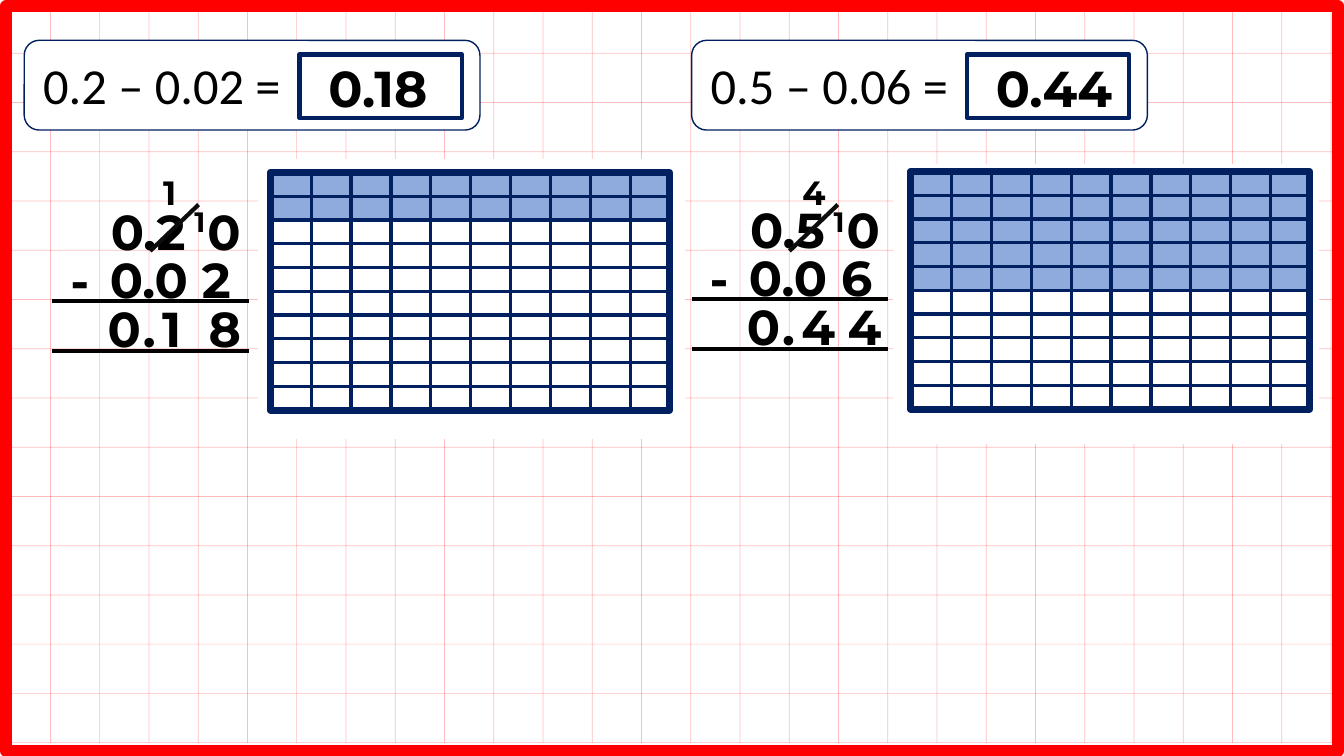
from lxml import etree
from pptx import Presentation
from pptx.dml.color import RGBColor
from pptx.enum.shapes import MSO_CONNECTOR, MSO_SHAPE
from pptx.enum.text import MSO_AUTO_SIZE
from pptx.oxml.ns import qn
from pptx.util import Inches, Pt

COLORS = {
    "red": "FF0000",
    "white": "FFFFFF",
    "navy": "002060",
    "shade": "8FAADC",
    "black": "000000",
    "strike": "0D0D0D",
}

PROBLEMS = [
    {
        "equation": "0.2 – 0.02 =", "answer": "0.18",
        "top_number": "0.2", "bottom_number": "0.0 2",
        "result": ("0", ".", "1", "8"), "reduced_digit": "1",
        "shaded_rows": 2, "split_column": 8,
        "equation_left": 0.24, "sum_left": 0.52, "sum_top": 1.95,
        "grid_left": 2.68, "grid_top": 1.71, "panel": (2.57, 1.58),
    },
    {
        "equation": "0.5 – 0.06 =", "answer": "0.44",
        "top_number": "0.5", "bottom_number": "0.0 6",
        "result": ("0", ".", "4", "4"), "reduced_digit": "4",
        "shaded_rows": 5, "split_column": 4,
        "equation_left": 6.86, "sum_left": 6.86, "sum_top": 1.93,
        "grid_left": 9.03, "grid_top": 1.7, "panel": (8.86, 1.63),
    },
]

SLIDE_WIDTH, SLIDE_HEIGHT = 13.33, 7.5
SQUARE = 0.4885
GRID_WIDTH, GRID_HEIGHT, GRID_COUNT = 3.96, 2.36, 10
RESULT_OFFSETS = (0.45, 0.8, 0.99, 1.45)


def color(name):
    return RGBColor.from_string(COLORS[name])


def add_box(shapes, left, top, width, height, fill=None, line=None, weight=1,
            kind=MSO_SHAPE.RECTANGLE):
    shape = shapes.add_shape(kind, Inches(left), Inches(top), Inches(width), Inches(height))
    shape.shadow.inherit = False
    if fill:
        shape.fill.solid()
        shape.fill.fore_color.rgb = color(fill)
    else:
        shape.fill.background()
    if line:
        shape.line.color.rgb = color(line)
        shape.line.width = Pt(weight)
    else:
        shape.line.fill.background()
    return shape


def add_line(shapes, start, end, line, weight, opacity=None):
    connector = shapes.add_connector(
        MSO_CONNECTOR.STRAIGHT, *[Inches(value) for value in (*start, *end)])
    connector.line.color.rgb = color(line)
    connector.line.width = Pt(weight)
    properties = connector.element.spPr
    if opacity:
        line_color = properties.find(".//" + qn("a:srgbClr"))
        etree.SubElement(line_color, qn("a:alpha")).set("val", str(opacity * 1000))
    etree.SubElement(properties, qn("a:effectLst"))


def add_text(shapes, text, left, top, width, height, size=35,
             font="Montserrat", bold=True, wrap=True):
    box = shapes.add_textbox(Inches(left), Inches(top), Inches(width), Inches(height))
    box.text_frame.word_wrap = wrap
    box.text_frame.auto_size = MSO_AUTO_SIZE.SHAPE_TO_FIT_TEXT
    paragraph = box.text_frame.paragraphs[0]
    paragraph.text = text
    paragraph.font.name = font
    paragraph.font.size = Pt(size)
    paragraph.font.bold = bold
    paragraph.font.color.rgb = color("black")


def add_squared_paper(slide):
    shapes = slide.shapes.add_group_shape().shapes
    for column in range(27):
        x = 0.5 + column * SQUARE
        add_line(shapes, (x, -0.13), (x, 7.37), "red", 0.5, 25)
    for row in range(16):
        y = 0.04 + row * SQUARE
        add_line(shapes, (SLIDE_WIDTH, y), (0, y), "red", 0.5, 25)


def add_equation(slide, problem):
    left = problem["equation_left"]
    shapes = slide.shapes.add_group_shape().shapes
    add_box(shapes, left, 0.4, 4.52, 0.89, "white", "navy", 1, MSO_SHAPE.ROUNDED_RECTANGLE)
    add_text(shapes, problem["equation"], left + 0.09, 0.49, 2.69, 0.71, 36,
             "Calibri", False, False)
    add_box(slide.shapes, left + 2.73, 0.54, 1.61, 0.63, line="navy", weight=3)
    add_text(slide.shapes, problem["answer"], left + 2.92, 0.52, 1.9, 0.71, 36)


def add_column_subtraction(slide, problem):
    shapes = slide.shapes
    left, top = problem["sum_left"], problem["sum_top"]
    add_text(shapes, problem["top_number"], left + 0.48, top, 2.01, 0.69)
    add_text(shapes, problem["bottom_number"], left + 0.47, top + 0.48, 2.01, 0.69)
    for rule_top in (top + 1.04, top + 1.53):
        add_line(shapes, (left, rule_top), (left + 1.95, rule_top), "black", 3)
    add_text(shapes, "-", left + 0.08, top + 0.49, 0.57, 0.69)
    add_text(shapes, "0", left + 1.44, top, 0.57, 0.69)
    for character, offset in zip(problem["result"], RESULT_OFFSETS):
        add_text(shapes, character, left + offset, top + 0.96, 0.57, 0.69)
    add_line(shapes, (left + 0.97, 2.49), (left + 1.45, 2.03), "strike", 3)
    add_text(shapes, problem["reduced_digit"], left + 1, 1.66, 0.36, 0.5, 24)
    add_text(shapes, "1", left + 1.31, 1.98, 0.35, 0.44, 20)


def add_hundred_grid(slide, problem):
    left, top = problem["grid_left"], problem["grid_top"]
    cell_width, cell_height = GRID_WIDTH / GRID_COUNT, GRID_HEIGHT / GRID_COUNT
    full_height = (problem["shaded_rows"] - 1) * cell_height
    split = problem["split_column"] * cell_width
    last_row = top + full_height + 0.01
    add_box(slide.shapes, left + split, last_row, GRID_WIDTH - split, 0.23, "shade")
    add_box(slide.shapes, left, last_row, split, 0.23, "shade")
    add_box(slide.shapes, left + 0.01, top, GRID_WIDTH, full_height, "shade")

    rows = slide.shapes.add_group_shape().shapes
    for row in range(GRID_COUNT):
        add_box(rows, left - 0.02, top + row * cell_height, GRID_WIDTH, cell_height,
                line="navy", weight=2.25)
    add_box(rows, left, top, GRID_WIDTH, GRID_HEIGHT, line="navy", weight=5)

    columns = slide.shapes.add_group_shape().shapes
    for column in range(GRID_COUNT):
        add_box(columns, left + 0.01 + column * cell_width, top, cell_width, GRID_HEIGHT,
                line="navy", weight=2.25)


def main():
    presentation = Presentation()
    presentation.slide_width = Inches(SLIDE_WIDTH)
    presentation.slide_height = Inches(SLIDE_HEIGHT)
    slide = presentation.slides.add_slide(presentation.slide_layouts[6])
    add_squared_paper(slide)
    for problem in PROBLEMS:
        add_box(slide.shapes, *problem["panel"], 4.22, 2.77, "white", "white")
    add_box(slide.shapes, 0.06, 0.06, 13.21, 7.39, line="red", weight=8.25)
    for add_part in (add_equation, add_column_subtraction, add_hundred_grid):
        for problem in PROBLEMS:
            add_part(slide, problem)
    presentation.save("out.pptx")


if __name__ == "__main__":
    main()
